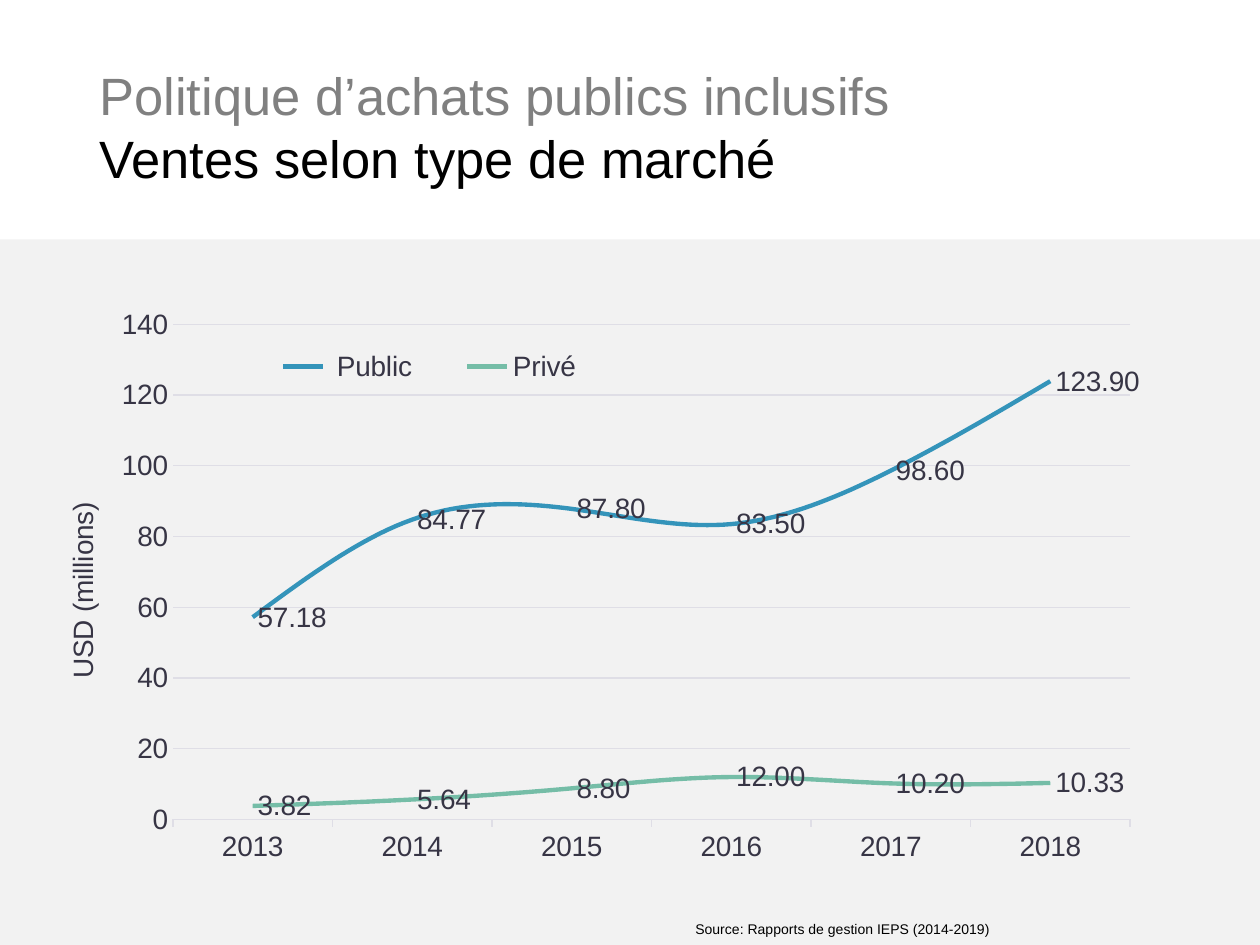
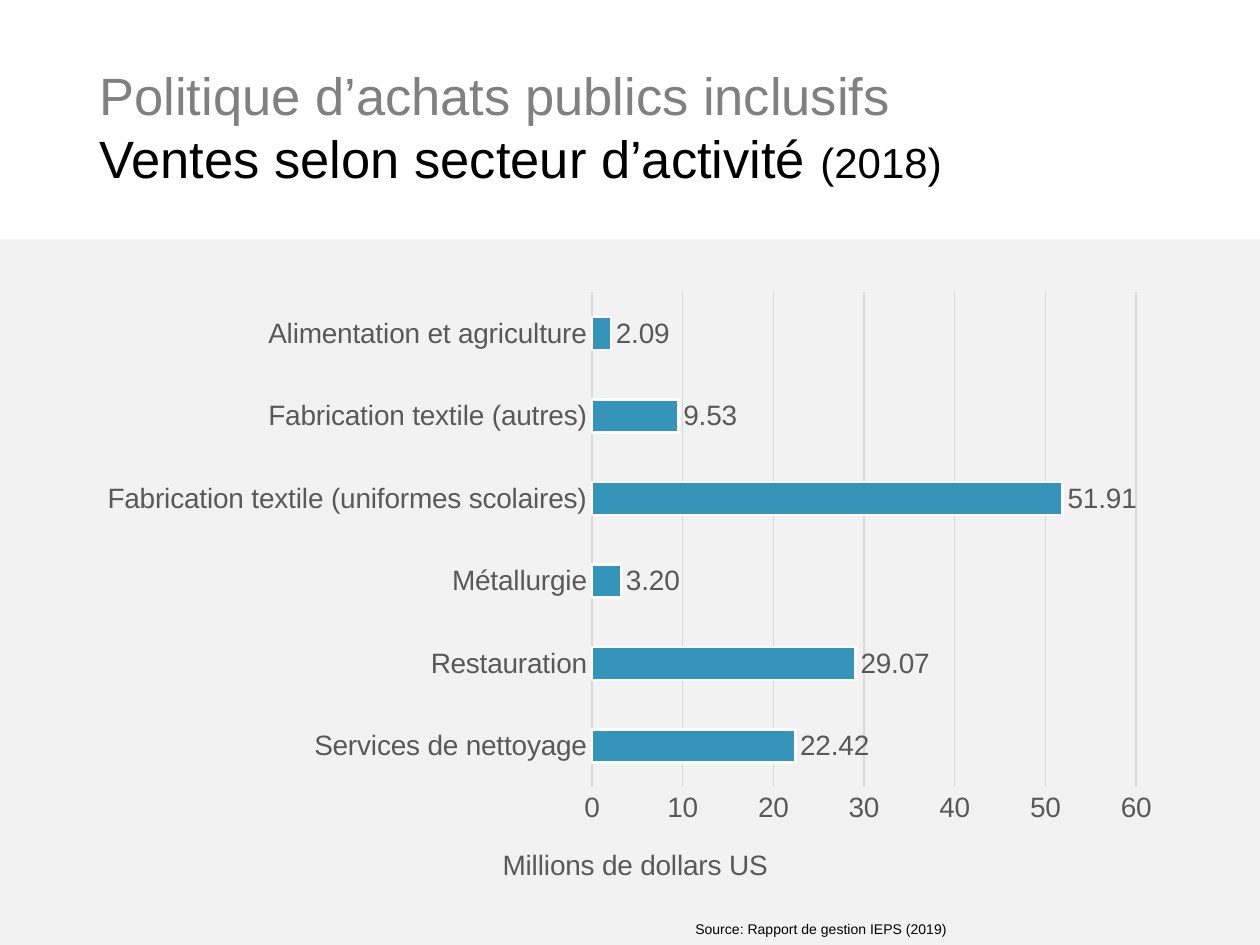
from pptx import Presentation
from pptx.chart.data import CategoryChartData
from pptx.dml.color import RGBColor
from pptx.enum.chart import (XL_CHART_TYPE, XL_LABEL_POSITION,
                             XL_LEGEND_POSITION, XL_TICK_MARK)
from pptx.enum.shapes import MSO_SHAPE
from pptx.enum.text import MSO_ANCHOR, PP_ALIGN
from pptx.oxml import parse_xml
from pptx.oxml.ns import nsdecls
from pptx.util import Inches, Pt

LINE, BAR = XL_CHART_TYPE.LINE, XL_CHART_TYPE.BAR_CLUSTERED
LABEL_RIGHT = XL_LABEL_POSITION.RIGHT
LABEL_OUTSIDE = XL_LABEL_POSITION.OUTSIDE_END
LEGEND_BOTTOM = XL_LEGEND_POSITION.BOTTOM
TICK_NONE, TICK_OUT = XL_TICK_MARK.NONE, XL_TICK_MARK.OUTSIDE
RECTANGLE = MSO_SHAPE.RECTANGLE
ANCHOR_BOTTOM = MSO_ANCHOR.BOTTOM
ALIGN_LEFT = PP_ALIGN.LEFT

WHITE = RGBColor(0xFF, 0xFF, 0xFF)
BLACK = RGBColor(0, 0, 0)
BAND_GREY = RGBColor(0xF2, 0xF2, 0xF2)
THEME_GREY = RGBColor(0x80, 0x80, 0x80)
BLUE = RGBColor(0x34, 0x94, 0xBA)
GREEN = RGBColor(0x75, 0xBD, 0xA7)
DARK_TEXT = RGBColor(0x37, 0x35, 0x45)
MID_TEXT = RGBColor(0x59, 0x59, 0x59)
LILAC_GRID = RGBColor(0xDF, 0xDE, 0xE6)
GREY_GRID = RGBColor(0xD9, 0xD9, 0xD9)

FONT = "Arial"
SLIDE_WIDTH, SLIDE_HEIGHT = Inches(10), Inches(7.5)
COLUMN, ROW = SLIDE_WIDTH / 100, SLIDE_HEIGHT / 75

# Boxes: left, top, width, height in columns and rows
TITLE_BOX = (6.9, 3.7, 86.2, 11.8)
BAND_BOX = (0, 19, 100, 56)
SOURCE_BOX = (54.2, 72.6, 50.6, 2.4)
MARKET_BOX = (-7.7, 21.1, 104.5, 62.7)
SECTOR_BOX = (6.9, 22.2, 86.2, 49.5)

THEME = "Politique d’achats publics inclusifs"


def on_grid(box):
    left, top, width, height = box
    return [round(n) for n in
            (left * COLUMN, top * ROW, width * COLUMN, height * ROW)]


def style_font(font, size, color):
    font.name, font.size, font.bold = FONT, Pt(size), False
    font.color.rgb = color


def add_title(slide, box, subject, year):
    title = slide.shapes.title
    title.left, title.top, title.width, title.height = on_grid(box)
    title.text_frame.vertical_anchor = ANCHOR_BOTTOM
    title.text_frame.word_wrap = True
    heading = title.text_frame.paragraphs[0]
    heading.text = f"{THEME}\v{subject}"
    heading.alignment = ALIGN_LEFT
    heading.line_spacing = Pt(36)
    if year:
        heading.add_run().text = year
    styles = ((30, THEME_GREY), (30, BLACK), (24, BLACK))
    for run, (size, color) in zip(heading.runs, styles):
        style_font(run.font, size, color)


def add_band(slide, box):
    band = slide.shapes.add_shape(RECTANGLE, *on_grid(box))
    band.shadow.inherit = False
    band.fill.solid()
    band.fill.fore_color.rgb = BAND_GREY
    band.line.fill.background()


def add_source(slide, box, source):
    frame = slide.shapes.add_textbox(*on_grid(box)).text_frame
    frame.word_wrap = True
    frame.text = f"Source: {source}"
    style_font(frame.paragraphs[0].runs[0].font, 8, BLACK)


def add_framed_slide(deck, subject, source, year=None):
    slide = deck.slides.add_slide(deck.slide_layouts[5])
    add_band(slide, BAND_BOX)
    add_title(slide, TITLE_BOX, subject, year)
    add_source(slide, SOURCE_BOX, source)
    return slide


def place_part(chart, part, index, target=None, **percents):
    """Fix a chart part at percentages of the chart's size."""
    parent = chart.element.xpath(f".//{part}")[0]
    for previous in parent.xpath("./c:layout"):
        parent.remove(previous)
    inner = f'<c:layoutTarget val="{target}"/>' if target else ""
    modes = "".join(f'<c:{key}Mode val="edge"/>' for key in "xy")
    sizes = "".join(f'<c:{key} val="{value / 100:.4f}"/>'
                    for key, value in percents.items())
    parent.insert(index, parse_xml(
        f'<c:layout {nsdecls("c")}><c:manualLayout>{inner}{modes}{sizes}'
        '</c:manualLayout></c:layout>'))


def add_value_chart(slide, box, kind, categories, series, text_color,
                    grid_color, top_value, step, unit, label_position):
    """Add a chart with the axes, grid and value labels both slides share."""
    data = CategoryChartData()
    data.categories = categories
    for name, values in series:
        data.add_series(name, values)
    chart = slide.shapes.add_chart(kind, *on_grid(box), data).chart
    chart.has_title = False
    chart.has_legend = False
    style_font(chart.font, 16, text_color)
    chart.plots[0].vary_by_categories = False

    amounts, names = chart.value_axis, chart.category_axis
    amounts.minimum_scale, amounts.maximum_scale = 0, top_value
    amounts.major_unit = step
    amounts.tick_labels.number_format = "0"
    amounts.tick_labels.number_format_is_linked = False
    amounts.has_major_gridlines = True
    amounts.format.line.fill.background()
    for line in (amounts.major_gridlines.format.line, names.format.line):
        line.color.rgb = grid_color
        line.width = Pt(0.75)
    for axis in (amounts, names):
        axis.major_tick_mark = axis.minor_tick_mark = TICK_NONE
        style_font(axis.tick_labels.font, 16, text_color)
    unit_frame = amounts.axis_title.text_frame
    unit_frame.text = unit
    style_font(unit_frame.paragraphs[0].runs[0].font, 16, text_color)

    for plotted in chart.plots[0].series:
        labels = plotted.data_labels
        labels.show_value = True
        labels.number_format = "0.00"
        labels.number_format_is_linked = False
        labels.position = label_position
        style_font(labels.font, 16, text_color)
    return chart


def add_market_slide(deck):
    slide = add_framed_slide(deck, "Ventes selon type de marché",
                             "Rapports de gestion IEPS (2014-2019)")
    chart = add_value_chart(
        slide, MARKET_BOX, LINE, [str(year) for year in range(2013, 2019)],
        [(" Public ", (57.18, 84.77, 87.8, 83.5, 98.6, 123.9)),
         ("Privé", (3.82, 5.64, 8.8, 12, 10.2, 10.33))],
        DARK_TEXT, LILAC_GRID, 140, 20, "USD (millions)", LABEL_RIGHT)
    chart.category_axis.major_tick_mark = TICK_OUT
    for market, color in zip(chart.plots[0].series, (BLUE, GREEN)):
        market.smooth = True
        market.format.line.color.rgb = color
        market.format.line.width = Pt(2.5)
    chart.has_legend = True
    chart.legend.position = LEGEND_BOTTOM
    chart.legend.include_in_layout = False
    style_font(chart.legend.font, 16, DARK_TEXT)
    unit_body = chart.element.xpath(".//c:valAx/c:title//a:bodyPr")[0]
    unit_body.set("rot", "-5400000")
    unit_body.set("vert", "horz")
    place_part(chart, "c:plotArea", 0, "inner", x=20.5, y=7.4, w=72.7, h=62.7)
    place_part(chart, "c:legend", 1, x=26, y=9.5, w=28, h=6.5)
    place_part(chart, "c:valAx/c:title", 1, x=11.9, y=29.3)


def add_sector_slide(deck):
    slide = add_framed_slide(deck, "Ventes selon secteur d’activité ",
                             "Rapport de gestion IEPS (2019)", "(2018)")
    sales = {
        "Services de nettoyage": 22.42,
        "Restauration": 29.07,
        "Métallurgie": 3.2,
        "Fabrication textile (uniformes scolaires)": 51.91,
        "Fabrication textile (autres)": 9.53,
        "Alimentation et agriculture": 2.09,
    }
    chart = add_value_chart(
        slide, SECTOR_BOX, BAR, list(sales), [("Series 1", sales.values())],
        MID_TEXT, GREY_GRID, 60, 10, "Millions de dollars US", LABEL_OUTSIDE)
    chart.plots[0].gap_width = 150
    sectors = chart.plots[0].series[0]
    sectors.invert_if_negative = False
    sectors.format.fill.solid()
    sectors.format.fill.fore_color.rgb = BLUE
    sectors.format.line.color.rgb = WHITE
    sectors.format.line.width = Pt(1.5)
    place_part(chart, "c:plotArea", 0, "inner", x=46.5, y=2, w=50.1, h=79.4)
    place_part(chart, "c:valAx/c:title", 1, x=37.8, y=90.2)


def main():
    deck = Presentation()
    deck.slide_width, deck.slide_height = SLIDE_WIDTH, SLIDE_HEIGHT
    add_market_slide(deck)
    add_sector_slide(deck)
    deck.save("out.pptx")


if __name__ == "__main__":
    main()
